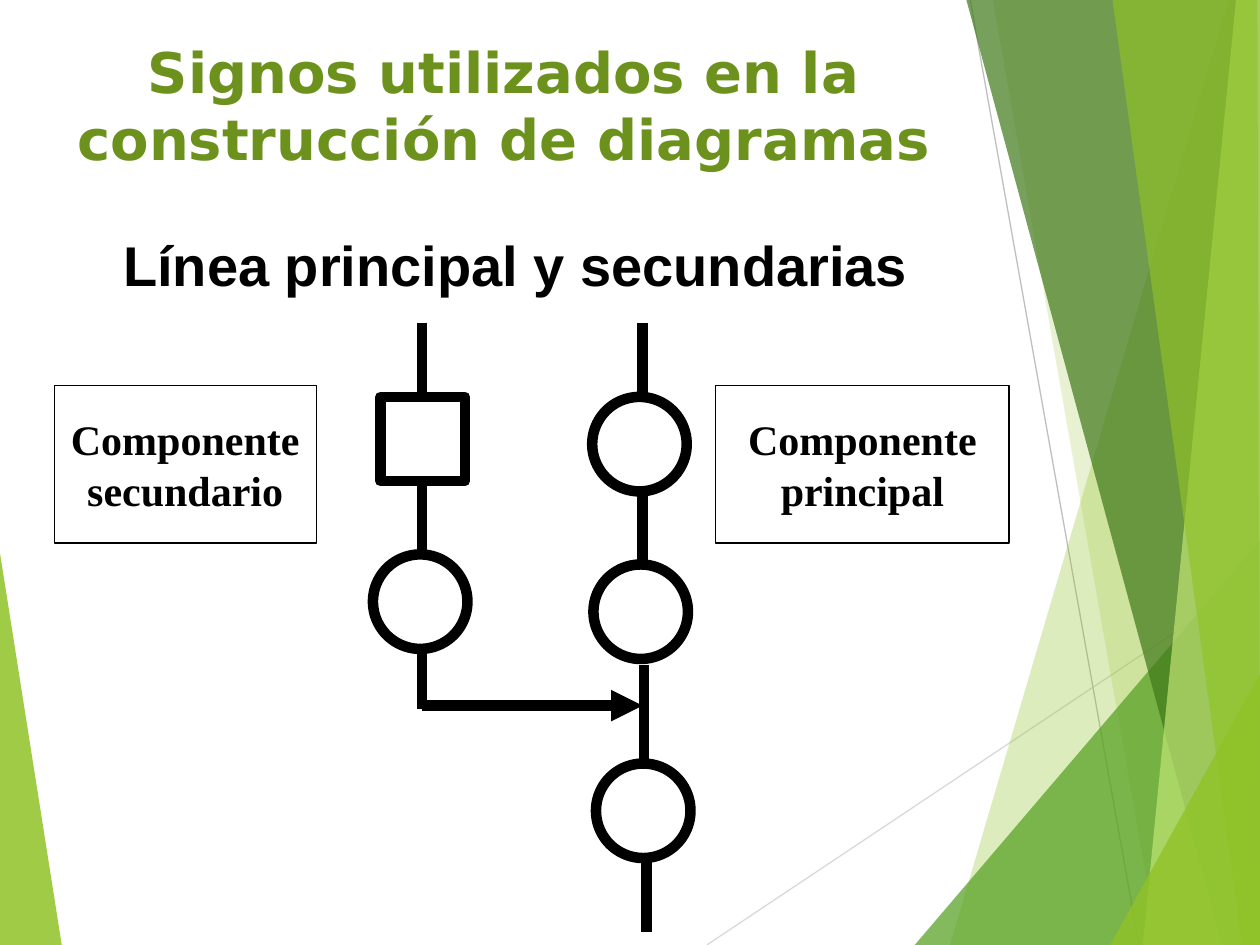
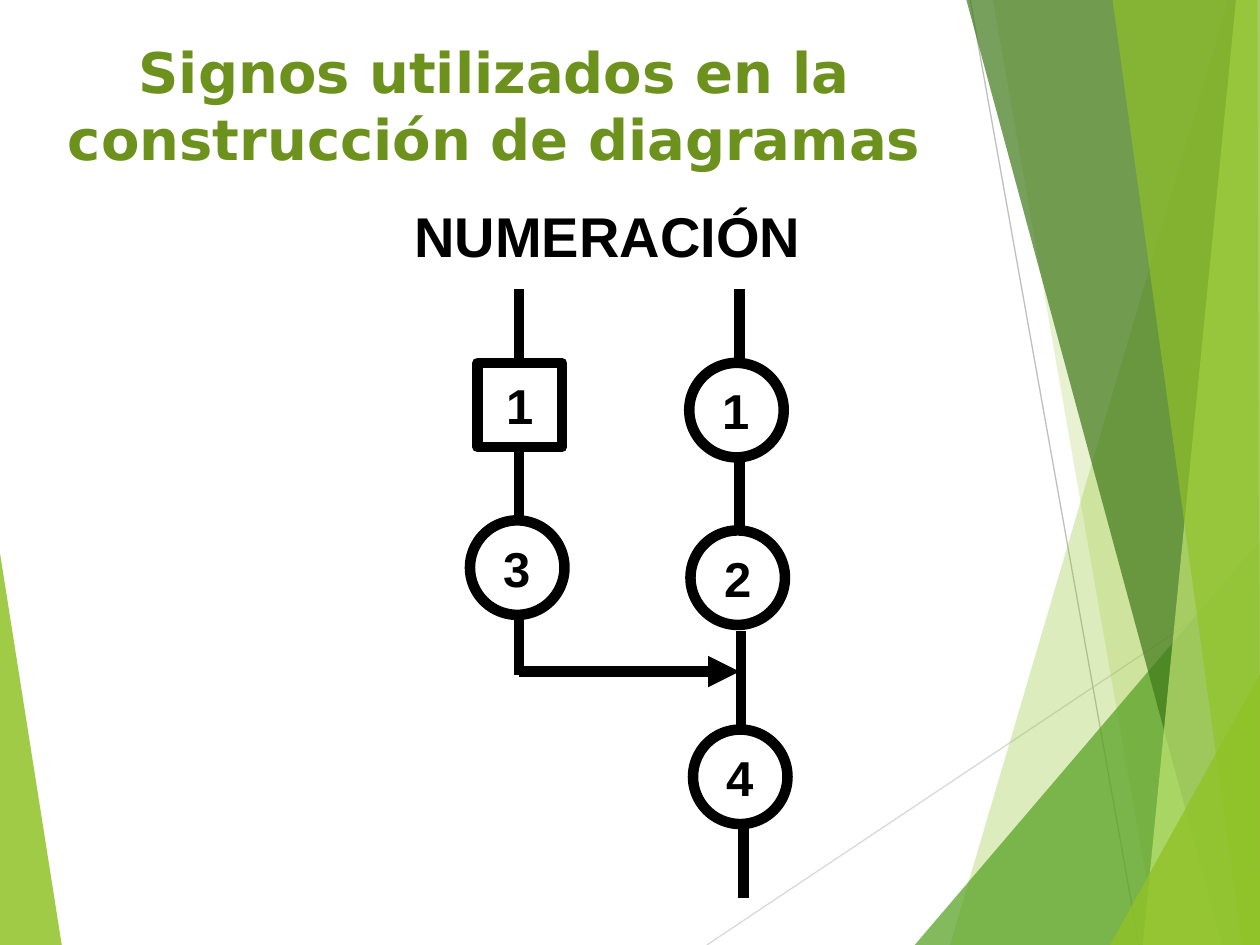
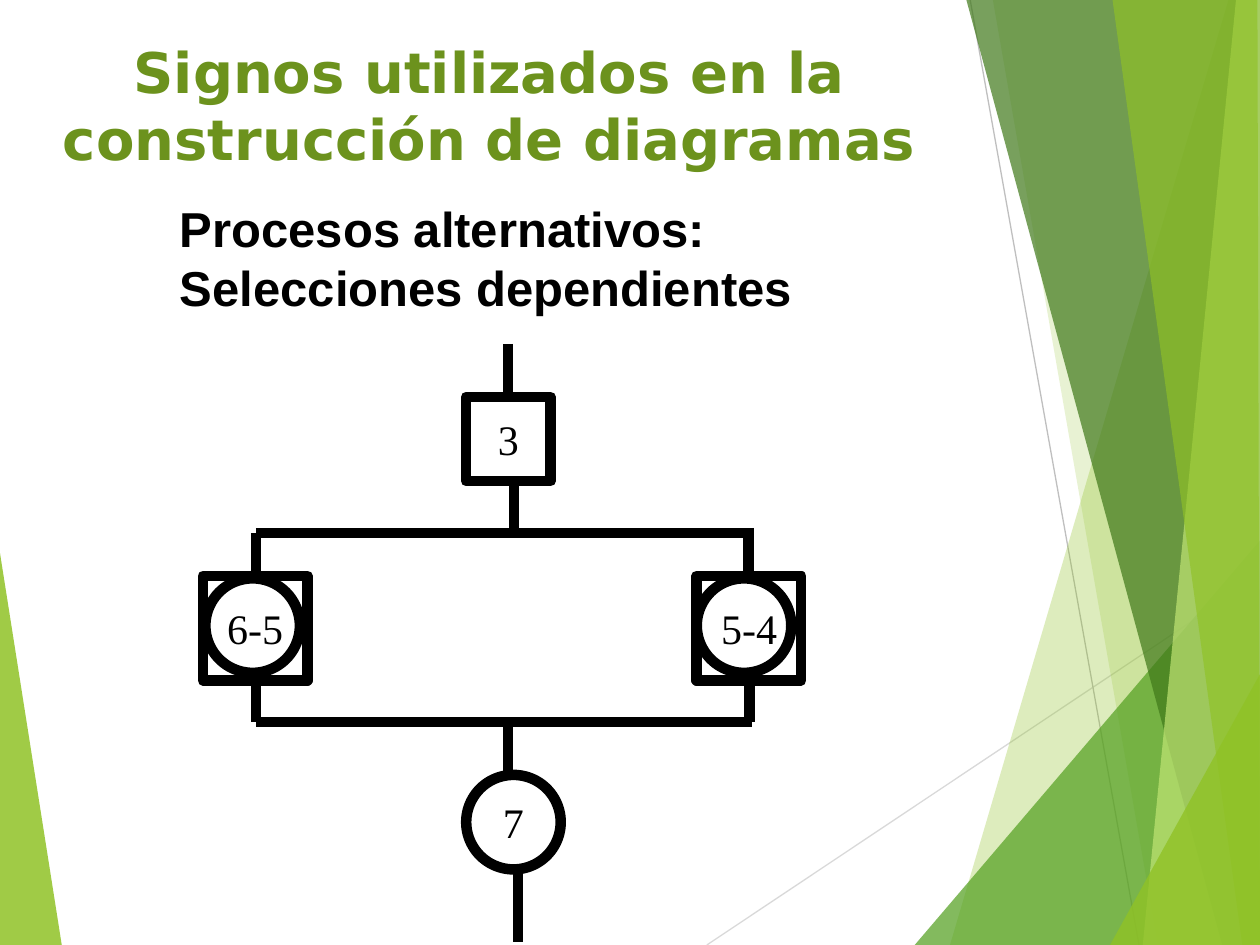
from lxml import etree
from pptx import Presentation
from pptx.dml.color import RGBColor
from pptx.enum.shapes import MSO_CONNECTOR, MSO_SHAPE
from pptx.enum.text import MSO_ANCHOR, PP_ALIGN
from pptx.oxml.ns import qn
from pptx.util import Inches, Pt

LEFT, CENTER = PP_ALIGN.LEFT, PP_ALIGN.CENTER
TOP, MIDDLE = MSO_ANCHOR.TOP, MSO_ANCHOR.MIDDLE
RECT, OVAL = MSO_SHAPE.RECTANGLE, MSO_SHAPE.OVAL
STRAIGHT = MSO_CONNECTOR.STRAIGHT

# The slide is a grid of 100 columns by 75 rows of square cells.
COLS, ROWS = 100, 75
WIDTH, HEIGHT = Inches(10), Inches(7.5)
CELL = WIDTH // COLS

BLACK, WHITE, OLIVE = "000000", "FFFFFF", "6C921D"
LIME, GREEN, DARK, PALE = "90C226", "54A021", "3F7819", "C0E474"
SANS, SERIF, HEAD = "Arial", "Times New Roman", "DejaVu Sans"
THICK, THIN = 6, 0.75
DISC, SQUARE, FRAME = 7.5, 6.7, 8.3

TITLE = "Signos utilizados en la construcción de diagramas"

# Colour, opacity in percent, corners in cells
BACK = [(LIME, 85, [(0, 43.9), (4.9, ROWS), (0, ROWS)])]
FRONT = [
    (LIME, 30, [(97.5, 0), (75.4, ROWS), (COLS, ROWS), (COLS, 0)]),
    (LIME, 20, [(78.8, 0), (91.9, ROWS), (COLS, ROWS), (COLS, 0)]),
    (GREEN, 72, [(72.6, ROWS), (COLS, 42.9), (COLS, ROWS)]),
    (DARK, 70, [(76.7, 0), (97, ROWS), (COLS, ROWS), (COLS, 0)]),
    (PALE, 70, [(98.1, 0), (90.7, ROWS), (COLS, ROWS), (COLS, 0)]),
    (LIME, 65, [(88.3, 0), (98.6, ROWS), (COLS, ROWS), (99.8, 0)]),
    (LIME, 80, [(88.1, ROWS), (COLS, 53.5), (COLS, ROWS)]),
]


def emu(*cells):
    return [round(cell * CELL) for cell in cells]


def rgb(code):
    return RGBColor.from_string(code)


def write(shape, text, font=SANS, size=32, color=BLACK, bold=True,
          align=CENTER, anchor=MIDDLE, wrap=False):
    frame = shape.text_frame
    frame.word_wrap = wrap
    frame.vertical_anchor = anchor
    frame.text = text
    for para in frame.paragraphs:
        para.alignment = align
        para.font.name = font
        para.font.size = Pt(size)
        para.font.bold = bold
        para.font.color.rgb = rgb(color)


def label(slide, box, text, **style):
    shape = slide.shapes.add_textbox(*emu(*box))
    write(shape, text, anchor=TOP, **style)


def node(slide, kind, box, fill=None, width=THICK, text="", **style):
    shape = slide.shapes.add_shape(kind, *emu(*box))
    shape.shadow.inherit = False
    if fill:
        shape.fill.solid()
        shape.fill.fore_color.rgb = rgb(fill)
    else:
        shape.fill.background()
    shape.line.color.rgb = rgb(BLACK)
    shape.line.width = Pt(width)
    if text:
        write(shape, text, **style)


def link(slide, start, end, color=BLACK, width=THICK, arrow=False):
    line = slide.shapes.add_connector(STRAIGHT, *emu(*start, *end))
    line.line.color.rgb = rgb(color)
    line.line.width = Pt(width)
    if arrow:
        etree.SubElement(line.line._get_or_add_ln(), qn("a:tailEnd"), type="triangle")
    etree.SubElement(line._element.spPr, qn("a:effectLst"))


def band(slide, color, alpha, points):
    first, *rest = [emu(*point) for point in points]
    pen = slide.shapes.build_freeform(*first)
    pen.add_line_segments(rest)
    shape = pen.convert_to_shape()
    shape.shadow.inherit = False
    shape.line.fill.background()
    shape.fill.solid()
    shape.fill.fore_color.rgb = rgb(color)
    tint = shape._element.spPr.find(".//" + qn("a:srgbClr"))
    etree.SubElement(tint, qn("a:alpha"), val=str(alpha * 1000))


def base(deck, width):
    """Add a slide with the shared bands and a title of the given width."""
    slide = deck.slides.add_slide(deck.slide_layouts[6])
    for item in BACK:
        band(slide, *item)
    link(slide, (56.1, ROWS), (COLS, 45.7), "D9D9D9", THIN)
    link(slide, (77, 0), (90.4, ROWS), "BFBFBF", THIN)
    for item in FRONT:
        band(slide, *item)
    label(slide, (3.3, 2.5, width, 11.8), TITLE, font=HEAD, color=OLIVE, wrap=True)
    return slide


def merge(slide, left, top, marks=("", "", "", "", "")):
    """Draw a side line that joins the main line, numbered by marks."""
    nodes = [(RECT, 0.6, 5.9, SQUARE), (OVAL, 17.4, 5.9, DISC),
             (OVAL, 17.5, 19.2, DISC), (OVAL, 0, 18.4, DISC),
             (OVAL, 17.7, 35, DISC)]
    for (kind, x, y, size), mark in zip(nodes, marks):
        node(slide, kind, (left + x, top + y, size, size), text=mark, size=28)
    stems = [(3.9, 0, 5.9), (3.9, 12.5, 18.4), (3.9, 26, 30.7),
             (21.4, 0, 5.9), (21.4, 13.4, 19.3), (21.5, 27.2, 35.1),
             (21.7, 42.4, 48.4)]
    for x, start, end in stems:
        link(slide, (left + x, top + start), (left + x, top + end))
    link(slide, (left + 3.9, top + 30.4), (left + 21.4, top + 30.4), arrow=True)


def fork(slide, left, top):
    """Draw a line that splits in two branches and closes again."""
    style = {"font": SERIF, "size": 24, "bold": False}
    stems = [(24.2, 0, 4.2), (24.7, 11.1, 15), (4.2, 15, 19),
             (43.3, 14.6, 18.5), (4.2, 25.9, 30), (43.4, 26.7, 30),
             (24.2, 30, 33.9), (25, 41.7, 47.5)]
    for x, start, end in stems:
        link(slide, (left + x, top + start), (left + x, top + end))
    for y, end in ((15, 43.4), (30, 43.6)):
        link(slide, (left + 4.2, top + y), (left + end, top + y))
    nodes = [(RECT, 20.9, 4.2, SQUARE, "3"), (OVAL, 0.2, 18.6, DISC, ""),
             (OVAL, 39.2, 18.6, DISC, ""), (RECT, 0, 18.4, FRAME, "6-5"),
             (RECT, 39.2, 18.4, FRAME, "5-4"), (OVAL, 20.9, 34.2, DISC, "7")]
    for kind, x, y, size, mark in nodes:
        node(slide, kind, (left + x, top + y, size, size), text=mark, **style)


def lines(deck):
    slide = base(deck, 73.4)
    label(slide, (4.3, 17.8, 73.3, 6.3), "Línea principal y secundarias", wrap=True)
    merge(slide, 29.6, 25.6)
    for x, width, name in ((56.8, 23.3, "principal"), (4.3, 20.8, "secundario")):
        node(slide, RECT, (x, 30.6, width, 12.5), WHITE, THIN,
             "Componente\n" + name, font=SERIF, size=24)


def numbers(deck):
    slide = base(deck, 71.9)
    label(slide, (31.9, 15.5, 32.9, 6.4), "NUMERACIÓN", align=LEFT)
    merge(slide, 37.3, 22.9, "11234")


def choices(deck):
    slide = base(deck, 71.1)
    label(slide, (13.3, 15.3, 51.2, 10.4),
          "Procesos alternativos:\nSelecciones dependientes", size=28, align=LEFT)
    fork(slide, 16.1, 27.3)


def main():
    deck = Presentation()
    deck.slide_width, deck.slide_height = WIDTH, HEIGHT
    for build in (lines, numbers, choices):
        build(deck)
    deck.save("out.pptx")


if __name__ == "__main__":
    main()
